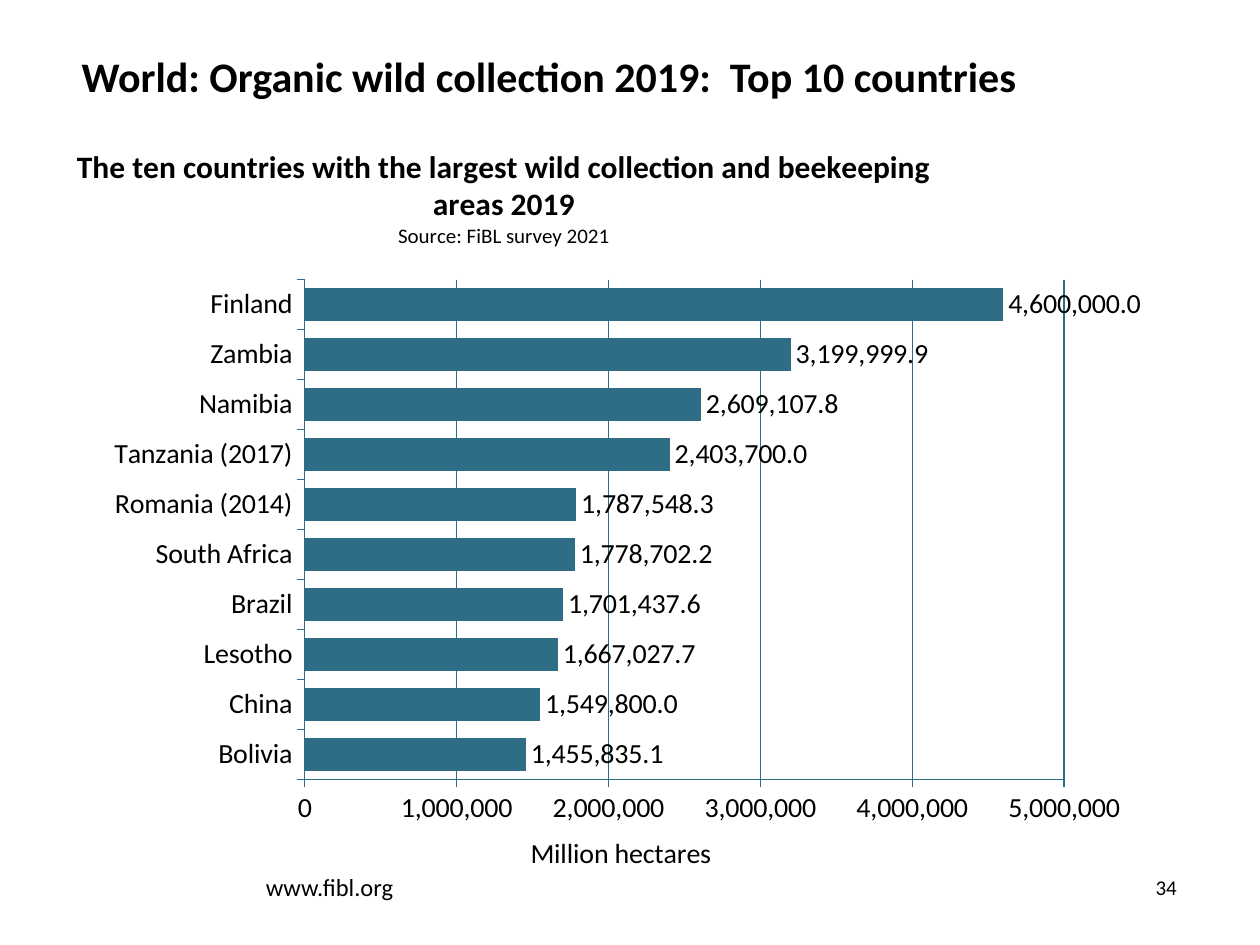
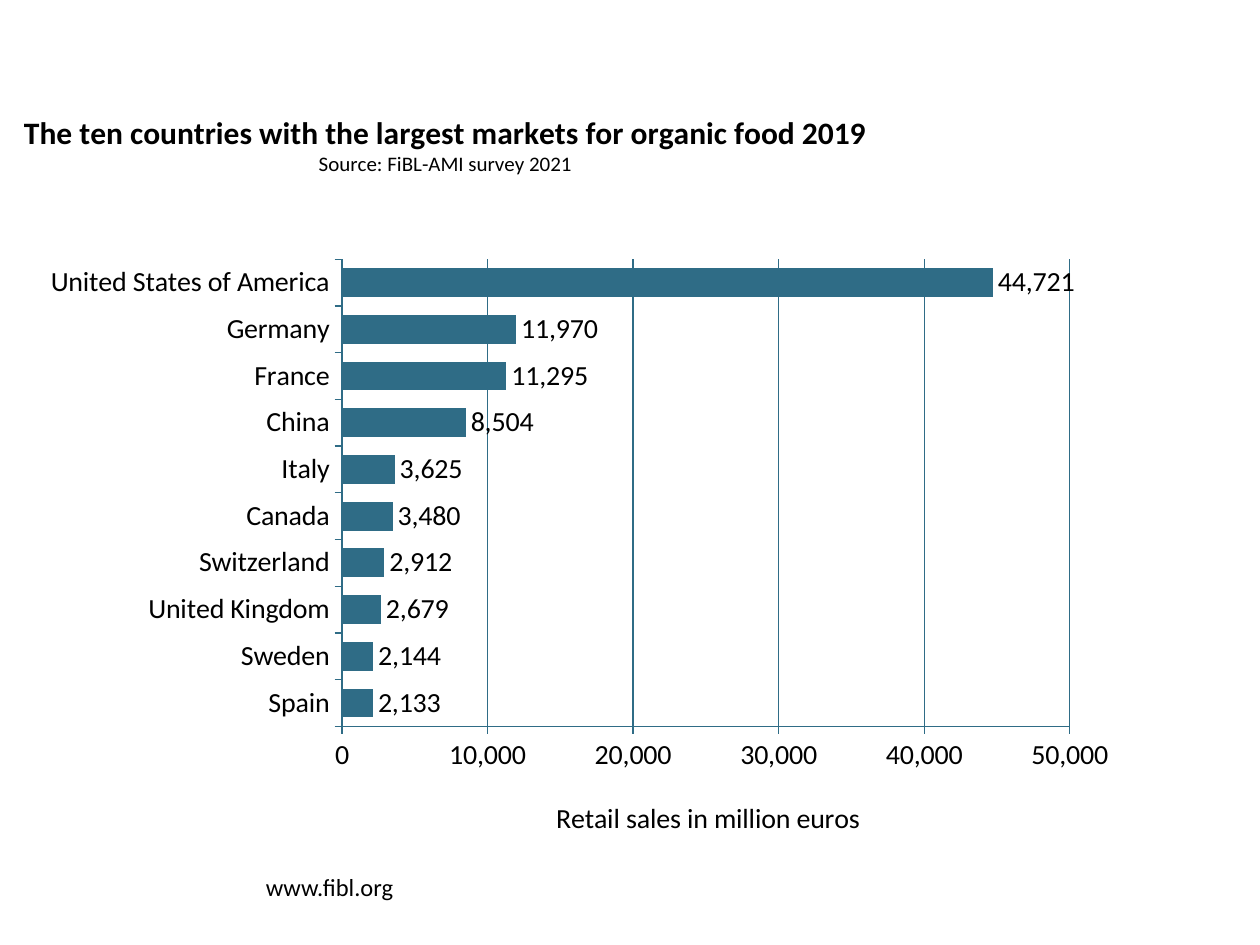
from dataclasses import dataclass

from lxml.etree import SubElement
from pptx import Presentation
from pptx.chart.data import CategoryChartData
from pptx.dml.color import RGBColor
from pptx.enum.chart import XL_CHART_TYPE as ChartType
from pptx.enum.chart import XL_LABEL_POSITION as LabelPosition
from pptx.enum.chart import XL_TICK_MARK as TickMark
from pptx.enum.text import MSO_ANCHOR as Anchor
from pptx.enum.text import PP_ALIGN as Align
from pptx.oxml import parse_xml
from pptx.oxml.ns import nsdecls, qn
from pptx.util import Inches, Pt


@dataclass(frozen=True)
class Theme:
    font: str = "Calibri"
    ink: str = "000000"
    accent: str = "2F6C86"
    heading: int = 24
    chart_title: int = 18
    label: int = 16
    footer: int = 14
    small: int = 12
    line: float = 0.75


THEME = Theme()
SLIDE_SIZE = 10, 7.5
FOOTER = "www.fibl.org"
FOOTER_INSETS = 0, 0.05

SLIDES = [
    dict(
        heading="World: Organic wild collection 2019:  Top 10 countries",
        number="34",
        frame=(0.58, 1.07, 8.76, 5.91),
        title="The ten countries with the largest wild collection and beekeeping areas 2019",
        source="Source: FiBL survey 2021",
        title_at=(0, 0.01),
        axis_title="Million hectares",
        axis_title_at=(0.41, 0.945),
        plot=(0.21, 0.197, 0.688, 0.68),
        gap=52,
        label_format="#,##0.0",
        step=1000000,
        values=[
            ("Finland", 4600000), ("Zambia", 3199999.9), ("Namibia", 2609107.8),
            ("Tanzania (2017)", 2403700), ("Romania (2014)", 1787548.3),
            ("South Africa", 1778702.2), ("Brazil", 1701437.6),
            ("Lesotho", 1667027.7), ("China", 1549800), ("Bolivia", 1455835.1),
        ],
    ),
    dict(
        frame=(0.16, 0.8, 8.78, 5.9),
        title="The ten countries with the largest markets for organic food 2019",
        source="Source: FiBL-AMI survey 2021",
        title_at=(0, 0.01),
        axis_title="Retail sales in million euros",
        axis_title_at=(0.48, 0.945),
        plot=(0.291, 0.216, 0.658, 0.637),
        gap=62,
        label_format="#,##0",
        step=10000,
        values=[
            ("United States of America", 44721), ("Germany", 11970),
            ("France", 11295), ("China", 8504), ("Italy", 3625),
            ("Canada", 3480), ("Switzerland", 2912),
            ("United Kingdom", 2679), ("Sweden", 2144), ("Spain", 2133),
        ],
    ),
]


def set_font(font, size, bold=False):
    font.name, font.size, font.bold = THEME.font, Pt(size), bold
    font.color.rgb = RGBColor.from_string(THEME.ink)


def add_text(slide, text, box, size, bold=False, align=Align.LEFT,
             anchor=Anchor.TOP, insets=(0.1, 0.05), spacing=None):
    shape = slide.shapes.add_textbox(*map(Inches, box))
    frame = shape.text_frame
    frame.word_wrap = True
    frame.vertical_anchor = anchor
    frame.margin_left = frame.margin_right = Inches(insets[0])
    frame.margin_top = frame.margin_bottom = Inches(insets[1])
    paragraph = frame.paragraphs[0]
    paragraph.alignment = align
    paragraph.line_spacing = spacing
    run = paragraph.add_run()
    run.text = text
    set_font(run.font, size, bold)


def place(element, index, shares, inner=False):
    for old in element.findall(qn("c:layout")):
        element.remove(old)
    layout = parse_xml(f"<c:layout {nsdecls('c')}/>")
    manual = SubElement(layout, qn("c:manualLayout"))
    settings = [("layoutTarget", "inner")] if inner else []
    settings += [("xMode", "edge"), ("yMode", "edge")]
    settings += zip("xywh", shares)
    for name, value in settings:
        SubElement(manual, qn(f"c:{name}")).set("val", str(value))
    element.insert(index, layout)


def write_title(title, lines, position):
    frame = title.text_frame
    for number, (text, size, bold) in enumerate(lines):
        paragraph = frame.add_paragraph() if number else frame.paragraphs[0]
        set_font(paragraph.font, size, bold)
        run = paragraph.add_run()
        run.text = text
        set_font(run.font, size, bold)
    place(title.element, 1, position)


def style_line(line):
    line.color.rgb = RGBColor.from_string(THEME.accent)
    line.width = Pt(THEME.line)


def add_bars(slide, content):
    data = CategoryChartData()
    rows = content["values"][::-1]
    data.categories = [country for country, _ in rows]
    data.add_series("Series 1", [value for _, value in rows])
    chart = slide.shapes.add_chart(
        ChartType.BAR_CLUSTERED, *map(Inches, content["frame"]), data).chart
    set_font(chart.font, THEME.label)
    chart.has_legend = False
    chart.has_title = True
    write_title(chart.chart_title, [
        (content["title"], THEME.chart_title, True),
        (content["source"], THEME.small, False),
    ], content["title_at"])
    place(next(chart.element.iter(qn("c:plotArea"))), 0, content["plot"], inner=True)

    for axis in (chart.category_axis, chart.value_axis):
        axis.major_tick_mark = TickMark.OUTSIDE
        axis.minor_tick_mark = TickMark.NONE
        set_font(axis.tick_labels.font, THEME.label)
        style_line(axis.format.line)
    amounts = chart.value_axis
    amounts.minimum_scale, amounts.maximum_scale = 0, 5 * content["step"]
    amounts.major_unit = content["step"]
    amounts.has_major_gridlines = True
    style_line(amounts.major_gridlines.format.line)
    amounts.tick_labels.number_format = "#,##0"
    amounts.tick_labels.number_format_is_linked = False
    write_title(amounts.axis_title, [(content["axis_title"], THEME.label, False)],
                content["axis_title_at"])

    plot = chart.plots[0]
    plot.gap_width = content["gap"]
    plot.vary_by_categories = False
    fill = plot.series[0].format.fill
    fill.solid()
    fill.fore_color.rgb = RGBColor.from_string(THEME.accent)
    plot.has_data_labels = True
    labels = plot.data_labels
    labels.show_value = True
    labels.position = LabelPosition.OUTSIDE_END
    labels.number_format = content["label_format"]
    labels.number_format_is_linked = False
    set_font(labels.font, THEME.label)


def main():
    presentation = Presentation()
    presentation.slide_width, presentation.slide_height = map(Inches, SLIDE_SIZE)
    blank = presentation.slide_layouts[6]
    for content in SLIDES:
        slide = presentation.slides.add_slide(blank)
        add_text(slide, FOOTER, (2.11, 6.86, 2.99, 0.34), THEME.footer,
                 anchor=Anchor.BOTTOM, insets=FOOTER_INSETS)
        if "number" in content:
            add_text(slide, content["number"], (8.47, 6.8, 0.87, 0.39), THEME.small,
                     align=Align.RIGHT, anchor=Anchor.BOTTOM, insets=FOOTER_INSETS)
        if "heading" in content:
            add_text(slide, content["heading"], (0.55, 0.4, 9.02, 0.39),
                     THEME.heading, bold=True, spacing=0.9)
        add_bars(slide, content)
    presentation.save("out.pptx")


if __name__ == "__main__":
    main()
